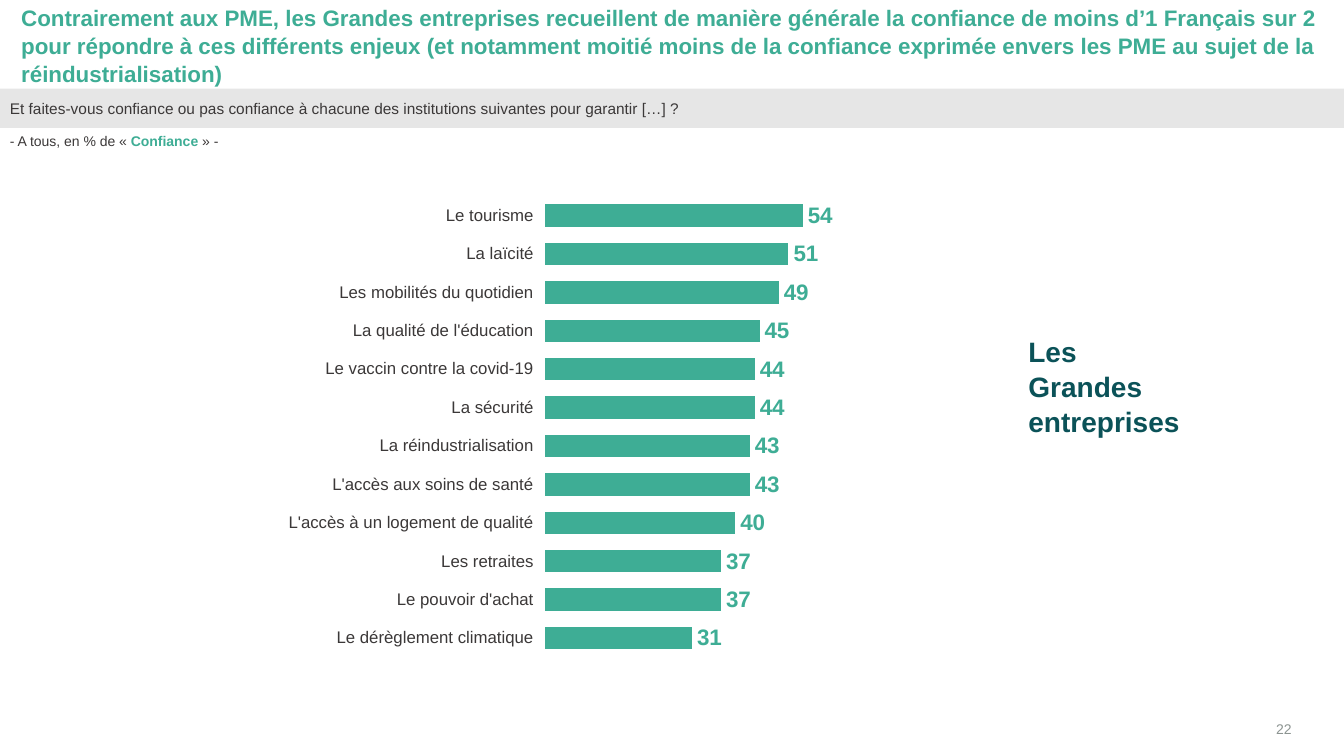
from lxml.etree import SubElement
from pptx import Presentation
from pptx.chart.data import CategoryChartData
from pptx.dml.color import RGBColor
from pptx.enum.chart import XL_CHART_TYPE as ChartType, XL_LABEL_POSITION as LabelPosition
from pptx.enum.chart import XL_TICK_LABEL_POSITION as TickLabels, XL_TICK_MARK as TickMark
from pptx.enum.shapes import MSO_SHAPE as Preset
from pptx.enum.text import MSO_ANCHOR as Anchor, MSO_AUTO_SIZE as AutoSize, PP_ALIGN as Align
from pptx.oxml.ns import qn
from pptx.util import Inches, Pt

FONT = "Arial"
COLORS = {
    "green": "3EAD95",
    "teal": "0B5258",
    "text": "3B3838",
    "band": "E6E6E6",
    "number": "8C9491",
    "white": "FFFFFF",
    "chart": "014537",
}
TRUST = {
    "Le tourisme": 54,
    "La laïcité": 51,
    "Les mobilités du quotidien": 49,
    "La qualité de l'éducation": 45,
    "Le vaccin contre la covid-19": 44,
    "La sécurité": 44,
    "La réindustrialisation": 43,
    "L'accès aux soins de santé": 43,
    "L'accès à un logement de qualité": 40,
    "Les retraites": 37,
    "Le pouvoir d'achat": 37,
    "Le dérèglement climatique": 31,
}
PLOT_AREA = {"x": 0.285, "y": 0.051, "w": 0.47, "h": 0.904}


def color(name):
    return RGBColor.from_string(COLORS[name])


def style_font(font, size, name, bold=False):
    font.name = FONT
    font.size = Pt(size)
    font.bold = bold
    font.color.rgb = color(name)


def place(shape, left, top, width, height):
    shape.left, shape.top = Inches(left), Inches(top)
    shape.width, shape.height = Inches(width), Inches(height)


def write(shape, spans, size, margins=(0, 0, 0, 0), anchor=Anchor.TOP, align=Align.LEFT, spacing=1.0):
    frame = shape.text_frame
    frame.word_wrap = True
    frame.auto_size = AutoSize.NONE
    frame.vertical_anchor = anchor
    frame.margin_left, frame.margin_top, frame.margin_right, frame.margin_bottom = map(Inches, margins)
    para = frame.paragraphs[0]
    para.alignment = align
    para.line_spacing = spacing
    for text, name, bold in spans:
        span = para.add_run()
        span.text = text
        style_font(span.font, size, name, bold)


def add_text(page, bounds, spans, size, **layout):
    box = page.shapes.add_textbox(*map(Inches, bounds))
    write(box, spans, size, **layout)


def add_title(page, text):
    title = page.shapes.title
    place(title, 0.11, 0.09, 12.96, 0.71)
    write(title, [(text, "green", True)], 16, margins=(0.1, 0, 0, 0), anchor=Anchor.MIDDLE, spacing=1.05)


def add_question_band(page, text):
    band = page.shapes.add_shape(Preset.RECTANGLE, *map(Inches, (0, 0.88, 13.33, 0.39)))
    band.shadow.inherit = False
    band.fill.solid()
    band.fill.fore_color.rgb = color("band")
    band.line.fill.background()
    write(band, [(text, "text", False)], 11, margins=(0.1, 0.1, 0.2, 0.1),
          anchor=Anchor.MIDDLE, align=Align.JUSTIFY)


def fix_plot_area(chart):
    plot_area = chart.plots[0]._element.getparent()
    layout = plot_area.find(qn("c:layout"))
    if layout is None:
        layout = SubElement(plot_area, qn("c:layout"))
        plot_area.insert(0, layout)
    manual = SubElement(layout, qn("c:manualLayout"))
    settings = {"layoutTarget": "inner", "xMode": "edge", "yMode": "edge", **PLOT_AREA}
    for tag, value in settings.items():
        SubElement(manual, qn(f"c:{tag}")).set("val", str(value))


def add_trust_chart(page, bounds):
    data = CategoryChartData()
    data.categories = list(TRUST)
    data.add_series("Confiance", list(TRUST.values()))
    chart = page.shapes.add_chart(ChartType.BAR_CLUSTERED, *map(Inches, bounds), data).chart
    chart.has_legend = False
    chart.has_title = False
    style_font(chart.font, 10, "chart")
    fix_plot_area(chart)

    categories = chart.category_axis
    categories.reverse_order = True
    categories.major_tick_mark = TickMark.OUTSIDE
    categories.tick_label_position = TickLabels.LOW
    categories.format.line.fill.background()
    style_font(categories.tick_labels.font, 12, "text")

    values = chart.value_axis
    values.minimum_scale, values.maximum_scale = 0, 100
    values.has_major_gridlines = False
    values.visible = False

    plot = chart.plots[0]
    plot.gap_width = 57
    plot.overlap = 100
    plot.vary_by_categories = False
    bars = plot.series[0]
    bars.format.fill.solid()
    bars.format.fill.fore_color.rgb = color("green")
    bars.format.line.color.rgb = color("white")
    bars.format.line.width = Pt(1.5)
    labels = bars.data_labels
    labels.show_value = True
    labels.position = LabelPosition.OUTSIDE_END
    style_font(labels.font, 16, "green", True)


def main():
    deck = Presentation()
    deck.slide_width, deck.slide_height = Inches(13.33), Inches(7.5)
    page = deck.slides.add_slide(deck.slide_layouts[5])
    add_title(page, "Contrairement aux PME, les Grandes entreprises recueillent de manière générale "
                    "la confiance de moins d’1 Français sur 2 pour répondre à ces différents enjeux "
                    "(et notamment moitié moins de la confiance exprimée envers les PME au sujet de la "
                    "réindustrialisation)")
    add_question_band(page, "Et faites-vous confiance ou pas confiance à chacune des institutions "
                            "suivantes pour garantir […] ?")
    add_text(page, (0, 1.27, 13.33, 0.24),
             [("- A tous, en % de « ", "text", False), ("Confiance", "green", True), (" » -", "text", False)],
             10, margins=(0.1, 0.05, 0.1, 0.05))
    add_trust_chart(page, (2.49, 1.69, 10.18, 5.06))
    add_text(page, (10.2, 3.3, 1.63, 1.01), [("Les Grandes entreprises", "teal", True)], 20, spacing=1.05)
    add_text(page, (12.22, 7.07, 0.59, 0.24), [("22", "number", False)], 10,
             anchor=Anchor.BOTTOM, align=Align.RIGHT)
    deck.save("out.pptx")


if __name__ == "__main__":
    main()
